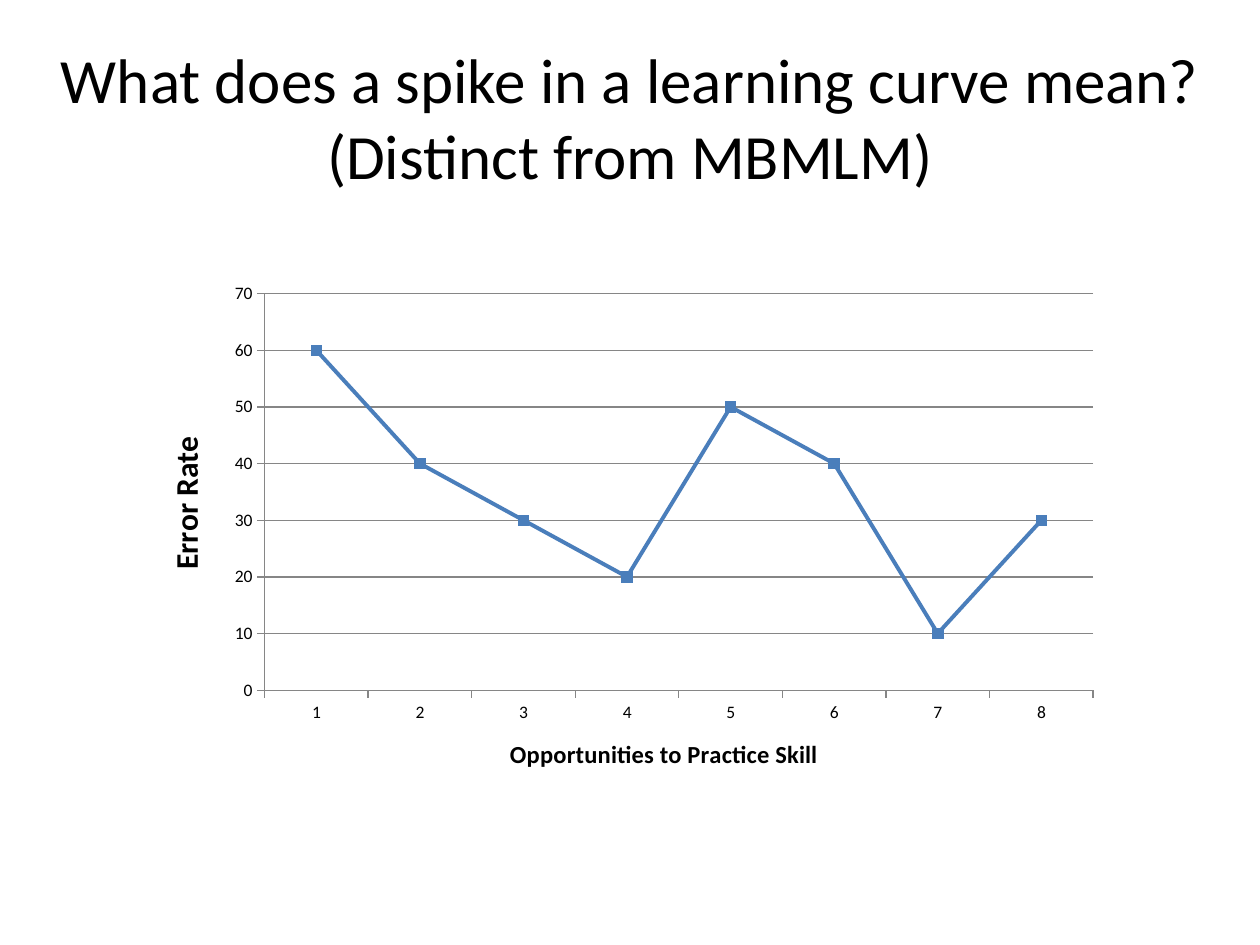
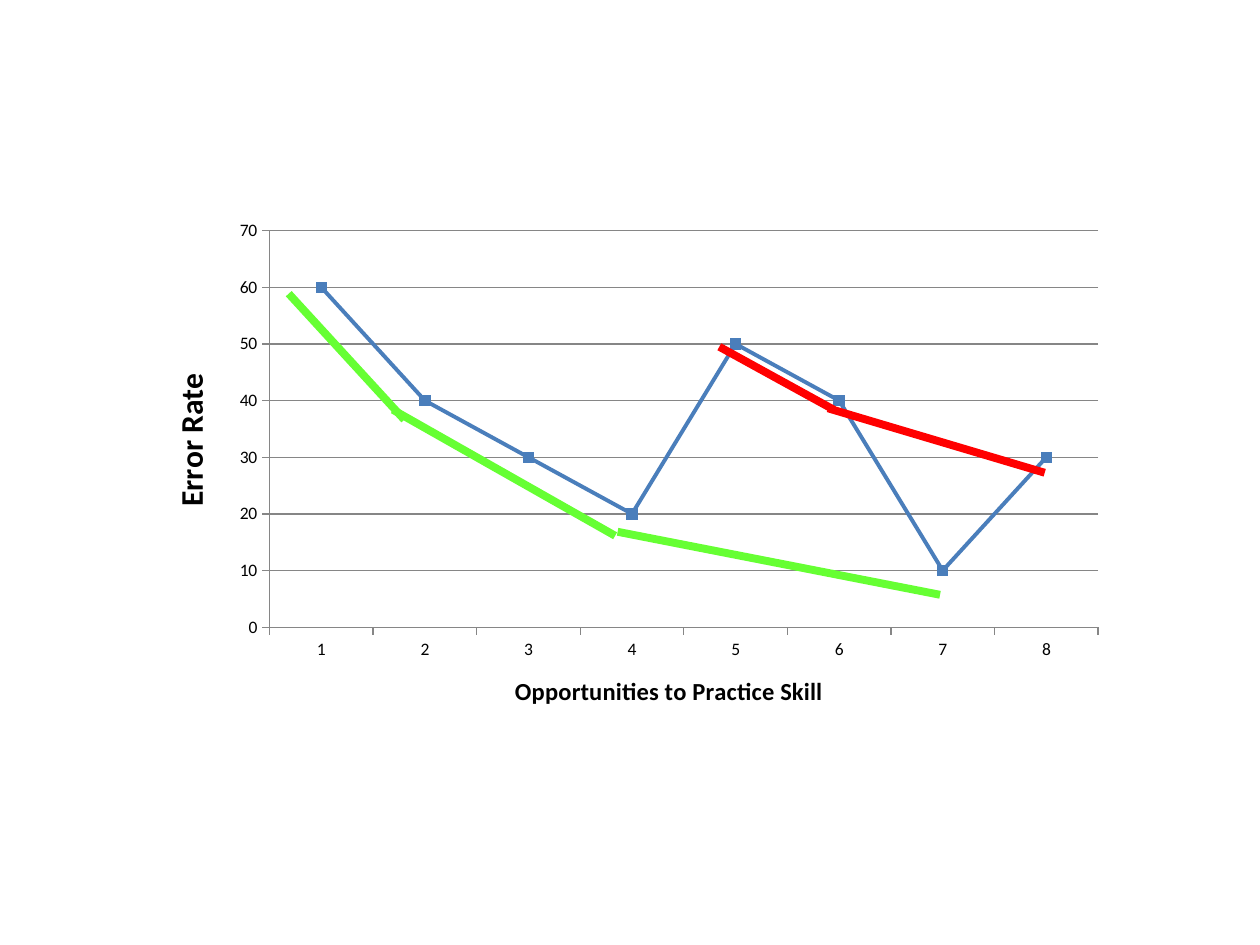
from dataclasses import dataclass
from typing import Optional

from lxml.etree import SubElement
from pptx import Presentation
from pptx.chart.axis import _BaseAxis as Axis
from pptx.chart.data import CategoryChartData as ChartData
from pptx.dml.color import RGBColor
from pptx.enum.chart import XL_CHART_TYPE as ChartType
from pptx.enum.chart import XL_MARKER_STYLE as MarkerStyle
from pptx.enum.chart import XL_TICK_MARK as TickMark
from pptx.enum.shapes import MSO_CONNECTOR as ConnectorType
from pptx.enum.text import MSO_ANCHOR as Anchor
from pptx.enum.text import MSO_AUTO_SIZE as AutoSize
from pptx.enum.text import PP_ALIGN as Align
from pptx.oxml.ns import qn
from pptx.slide import Slide
from pptx.text.text import TextFrame
from pptx.util import Cm, Pt

TITLE_ONLY, BLANK = 5, 6
SLIDE_WIDTH, SLIDE_HEIGHT = Cm(25.4), Cm(19.05)


@dataclass(frozen=True)
class Theme:
    font: str = "Calibri"
    text: RGBColor = RGBColor(0, 0, 0)
    curve: RGBColor = RGBColor(0x4A, 0x7E, 0xBB)
    marker: RGBColor = RGBColor(0x4F, 0x81, 0xBD)
    axis: RGBColor = RGBColor(0x86, 0x86, 0x86)
    low_trend: RGBColor = RGBColor(0x66, 0xFF, 0x33)
    high_trend: RGBColor = RGBColor(0xFF, 0, 0)
    title_size: float = 36
    error_rate_size: float = 18
    opportunities_size: float = 14
    label_size: float = 10
    axis_width: float = 0.75
    curve_width: float = 2.25
    trend_width: float = 4.5
    marker_size: int = 6


THEME = Theme()


@dataclass(frozen=True)
class TrendLine:
    """A straight stroke over the chart; its ends are in centimetres."""
    start: tuple[float, float]
    end: tuple[float, float]
    color: RGBColor


TREND_LINES = (
    TrendLine((5.82, 5.92), (8.15, 8.46), THEME.low_trend),
    TrendLine((7.92, 8.26), (12.4, 10.8), THEME.low_trend),
    TrendLine((12.45, 10.72), (18.95, 11.99), THEME.low_trend),
    TrendLine((16.81, 8.26), (14.5, 6.99), THEME.high_trend),
    TrendLine((21.06, 9.53), (16.69, 8.23), THEME.high_trend),
)
ERROR_RATES = (60, 40, 30, 20, 50, 40, 10, 30)


def write_text(frame: TextFrame, text: str, *, size: float, bold: bool = False,
               align: Optional[Align] = None) -> None:
    paragraph = frame.paragraphs[0]
    if align is not None:
        paragraph.alignment = align
    run = paragraph.add_run()
    run.text = text
    run.font.name = THEME.font
    run.font.size = Pt(size)
    run.font.bold = bold
    run.font.color.rgb = THEME.text


def add_title(slide: Slide, text: str) -> None:
    title = slide.shapes.title
    title.left, title.top = Cm(0), Cm(0.76)
    title.width, title.height = SLIDE_WIDTH, Cm(3.18)
    frame = title.text_frame
    frame.word_wrap = True
    frame.auto_size = AutoSize.NONE
    frame.vertical_anchor = Anchor.MIDDLE
    write_text(frame, text, size=THEME.title_size, align=Align.CENTER)


def style_axis(axis: Axis, title: str, title_size: float) -> None:
    axis.major_tick_mark = TickMark.OUTSIDE
    axis.minor_tick_mark = TickMark.NONE
    axis.format.line.color.rgb = THEME.axis
    axis.format.line.width = Pt(THEME.axis_width)
    write_text(axis.axis_title.text_frame, title, size=title_size, bold=True)


def add_learning_curve(slide: Slide, left: float, top: float) -> None:
    data = ChartData()
    data.categories = [str(number) for number in range(1, len(ERROR_RATES) + 1)]
    data.add_series("Series 1", ERROR_RATES)
    chart = slide.shapes.add_chart(ChartType.LINE_MARKERS, Cm(left), Cm(top),
                                   Cm(19.69), Cm(10.59), data).chart
    chart.has_title = False
    chart.has_legend = False
    chart.font.name = THEME.font
    chart.font.size = Pt(THEME.label_size)
    chart.font.color.rgb = THEME.text

    style_axis(chart.category_axis, "Opportunities to Practice Skill",
               THEME.opportunities_size)
    error_axis = chart.value_axis
    style_axis(error_axis, "Error Rate", THEME.error_rate_size)
    error_axis.minimum_scale, error_axis.maximum_scale = 0, 70
    error_axis.major_unit = 10
    error_axis.has_major_gridlines = True
    gridline = error_axis.major_gridlines.format.line
    gridline.color.rgb = THEME.axis
    gridline.width = Pt(THEME.axis_width)

    plot = chart.plots[0]
    plot.vary_by_categories = False
    curve = plot.series[0]
    curve.smooth = False
    curve.format.line.color.rgb = THEME.curve
    curve.format.line.width = Pt(THEME.curve_width)
    marker = curve.marker
    marker.style = MarkerStyle.SQUARE
    marker.size = THEME.marker_size
    marker.format.fill.solid()
    marker.format.fill.fore_color.rgb = THEME.marker
    marker.format.line.color.rgb = THEME.curve


def add_trend_line(slide: Slide, trend: TrendLine) -> None:
    ends = [Cm(value) for value in (*trend.start, *trend.end)]
    connector = slide.shapes.add_connector(ConnectorType.STRAIGHT, *ends)
    connector.line.color.rgb = trend.color
    connector.line.width = Pt(THEME.trend_width)
    SubElement(connector._element.spPr, qn("a:effectLst"))


def main() -> None:
    presentation = Presentation()
    presentation.slide_width, presentation.slide_height = SLIDE_WIDTH, SLIDE_HEIGHT
    layouts = presentation.slide_layouts

    question = presentation.slides.add_slide(layouts[TITLE_ONLY])
    add_title(question,
              "What does a spike in a learning curve mean? (Distinct from MBMLM)")
    add_learning_curve(question, left=2.74, top=5.51)

    explanation = presentation.slides.add_slide(layouts[BLANK])
    add_learning_curve(explanation, left=2.84, top=4.24)
    for trend in TREND_LINES:
        add_trend_line(explanation, trend)

    presentation.save("out.pptx")


if __name__ == "__main__":
    main()
